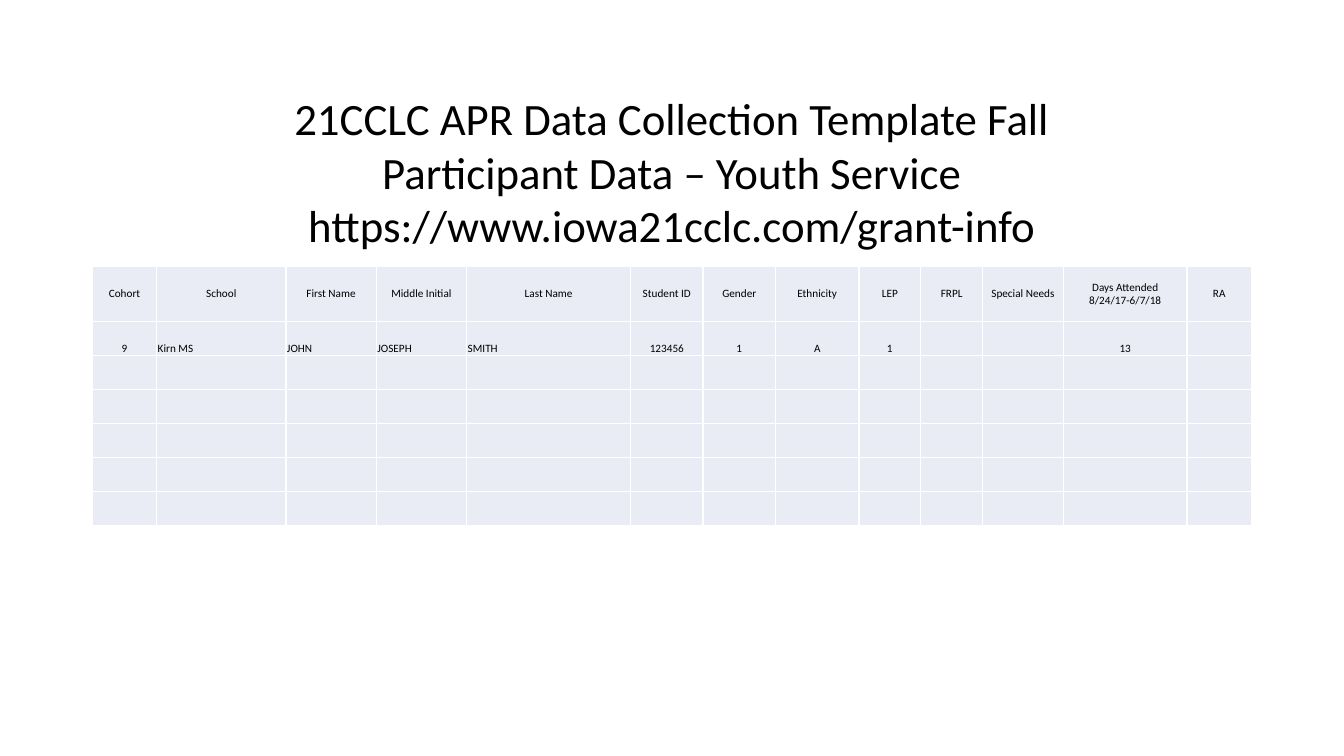
from dataclasses import dataclass

from lxml import etree
from pptx import Presentation
from pptx.dml.color import RGBColor
from pptx.enum.text import MSO_ANCHOR, PP_ALIGN
from pptx.oxml.ns import qn
from pptx.util import Pt

CENTER, LEFT = PP_ALIGN.CENTER, PP_ALIGN.LEFT
MIDDLE, BOTTOM = MSO_ANCHOR.MIDDLE, MSO_ANCHOR.BOTTOM


@dataclass(frozen=True)
class Theme:
    font: str = "Calibri"
    title_size: float = 32
    cell_size: float = 8
    text: str = "000000"
    cell_fill: str = "E9EBF5"
    border: str = "FFFFFF"
    border_width: float = 1
    inset: float = 0.72


THEME = Theme()

TITLE = [
    "21CCLC APR Data Collection Template Fall",
    "Participant Data – Youth Service https://www.iowa21cclc.com/grant-info",
]
COLUMNS = [
    ("Cohort", 46, "9", CENTER),
    ("School", 92.4, "Kirn MS", LEFT),
    ("First Name", 64.6, "JOHN", LEFT),
    ("Middle Initial", 64.6, "JOSEPH", LEFT),
    ("Last Name", 117.2, "SMITH", LEFT),
    ("Student ID", 51.8, "123456", CENTER),
    ("Gender", 51.8, "1", CENTER),
    ("Ethnicity", 59.6, "A", CENTER),
    ("LEP", 44.2, "1", CENTER),
    ("FRPL", 44.2, "", CENTER),
    ("Special Needs", 57.8, "", CENTER),
    ("Days Attended\n8/24/17-6/7/18", 88.4, "13", CENTER),
    ("RA", 46, "", CENTER),
]
HEADER_HEIGHT = 39.4
ROW_HEIGHT = 24.4
DATA_ROWS = 6


def add_text(p, text, size, align):
    p.alignment = align
    for i, line in enumerate(text.split("\n")):
        if i:
            p.add_line_break()
        r = p.add_run()
        r.text = line
        r.font.name = THEME.font
        r.font.size = Pt(size)
        r.font.color.rgb = RGBColor.from_string(THEME.text)


def add_title(slide, left, top, width, height):
    sp = slide.shapes.add_textbox(Pt(left), Pt(top), Pt(width), Pt(height))
    tf = sp.text_frame
    tf.word_wrap = True
    for i, text in enumerate(TITLE):
        p = tf.add_paragraph() if i else tf.paragraphs[0]
        add_text(p, text, THEME.title_size, CENTER)


def style_cell(cell, anchor):
    cell.margin_left = cell.margin_right = cell.margin_top = Pt(THEME.inset)
    cell.margin_bottom = 0
    cell.vertical_anchor = anchor
    tc_pr = cell._tc.get_or_add_tcPr()
    for side in ("a:lnL", "a:lnR", "a:lnT", "a:lnB"):
        ln = etree.SubElement(tc_pr, qn(side), w=str(Pt(THEME.border_width)))
        fill = etree.SubElement(ln, qn("a:solidFill"))
        etree.SubElement(fill, qn("a:srgbClr"), val=THEME.border)
    cell.fill.solid()
    cell.fill.fore_color.rgb = RGBColor.from_string(THEME.cell_fill)


def add_participants(slide, left, top, width):
    height = HEADER_HEIGHT + DATA_ROWS * ROW_HEIGHT
    frame = slide.shapes.add_table(
        DATA_ROWS + 1, len(COLUMNS), Pt(left), Pt(top), Pt(width), Pt(height)
    )
    table = frame.table
    for i, row in enumerate(table.rows):
        row.height = Pt(ROW_HEIGHT if i else HEADER_HEIGHT)
        for cell in row.cells:
            style_cell(cell, BOTTOM if i else MIDDLE)
    scale = width / sum(column[1] for column in COLUMNS)
    for c, (header, col_width, value, align) in enumerate(COLUMNS):
        table.columns[c].width = Pt(col_width * scale)
        for r, (text, text_align) in enumerate([(header, CENTER), (value, align)]):
            if text:
                p = table.cell(r, c).text_frame.paragraphs[0]
                add_text(p, text, THEME.cell_size, text_align)


def main():
    prs = Presentation()
    prs.slide_width, prs.slide_height = Pt(960), Pt(540)
    slide = prs.slides.add_slide(prs.slide_layouts[6])
    add_participants(slide, 66, 190, 828)
    add_title(slide, 66, 61.2, 828, 123.8)
    prs.save("out.pptx")


if __name__ == "__main__":
    main()
